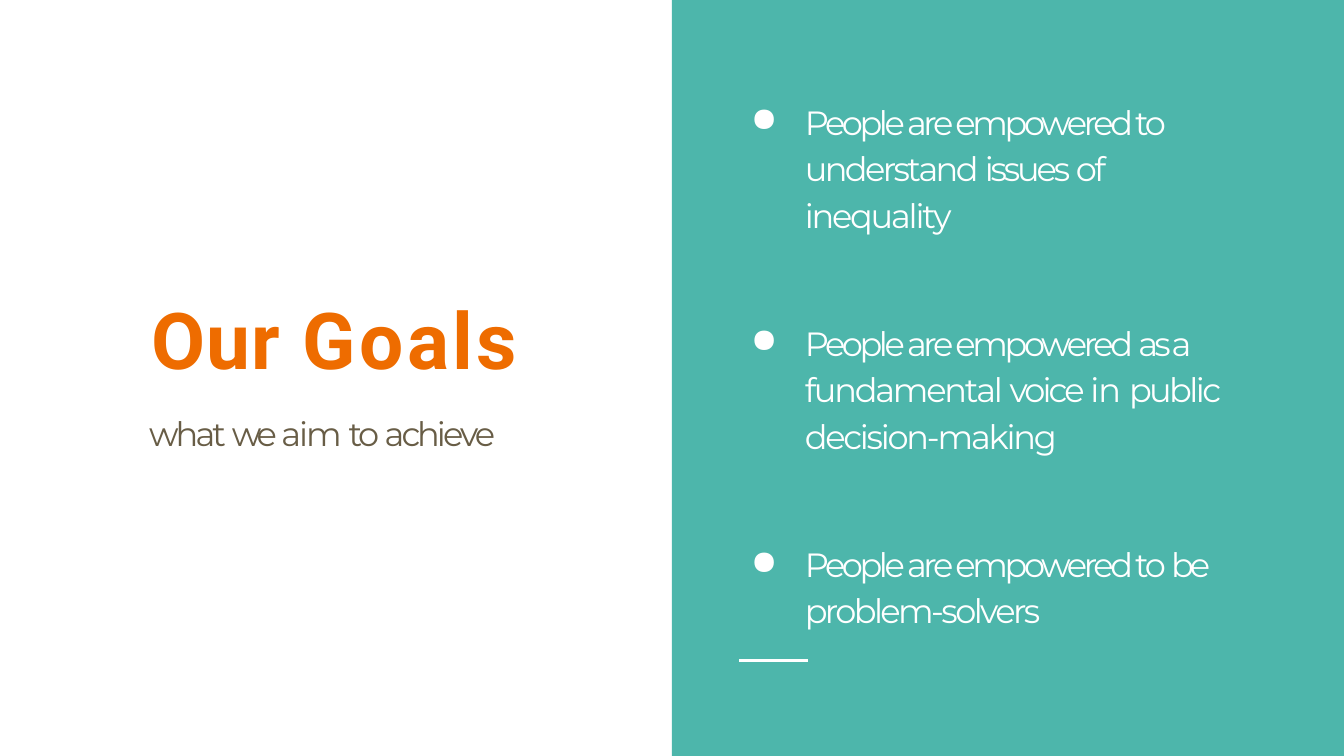
from lxml.etree import SubElement
from pptx import Presentation
from pptx.dml.color import RGBColor
from pptx.enum.shapes import MSO_CONNECTOR, MSO_SHAPE
from pptx.enum.text import MSO_AUTO_SIZE
from pptx.oxml.ns import qn
from pptx.util import Cm, Pt

WHITE, TEAL, ORANGE, BROWN = "FFFFFF", "4DB6AB", "EE6C00", "685D46"
PAGE_WIDTH, PAGE_HEIGHT = 25.4, 14.29

# Each span is its text and its letter spacing in points.
TITLE = [("Our ", 0.6), ("Goals", 1.9)]
SUBTITLE = [("what ", -1.6), ("we ", -2.3), ("aim ", -1.1), ("to ", -1.8), ("achieve", -1.6)]
# Each goal is its box width and height in centimetres and its spans.
GOALS = [
    (8.59, 2.69, [("People are empowered to ", -1.8), ("understand ", -1.4), ("issues ", -1.7),
                  ("of ", -1.4), ("inequality", -1.2)]),
    (9.45, 2.69, [("People are empowered ", -1.8), ("as a ", -2.1), ("fundamental ", -1.2),
                  ("voice ", -1.6), ("in ", -0.5), ("public ", -1.4), ("decision-making", -1.2)]),
    (9.45, 1.83, [("People are empowered to ", -1.8), ("be ", -2.2), ("problem-solvers", -1.4)]),
]


def color(hex_code):
    return RGBColor.from_string(hex_code)


def add_text_frame(page, left, top, width, height):
    box = page.shapes.add_textbox(Cm(left), Cm(top), Cm(width), Cm(height))
    frame = box.text_frame
    frame.word_wrap = True
    frame.auto_size = MSO_AUTO_SIZE.SHAPE_TO_FIT_TEXT
    frame.margin_left = frame.margin_right = frame.margin_bottom = 0
    frame.margin_top = Cm(0.06)
    return frame


def fill_paragraph(para, spans, font_name, size, hex_code, bold=False):
    para.font.name = font_name
    para.font.size = Pt(size)
    para.font.bold = bold
    para.font.color.rgb = color(hex_code)
    for text, spacing in spans:
        span = para.add_run()
        span.text = text
        span._r.get_or_add_rPr().set("spc", str(round(spacing * 100)))


def set_indent(para, margin, indent=0):
    properties = para._p.get_or_add_pPr()
    properties.set("marL", str(Cm(margin)))
    properties.set("indent", str(Cm(indent)))
    return properties


def add_bullet(para):
    properties = set_indent(para, 1.04, -1.02)
    SubElement(properties, qn("a:buChar"), char="●")
    tabs = SubElement(properties, qn("a:tabLst"))
    for position in (1.04, 1.07):
        SubElement(tabs, qn("a:tab"), pos=str(Cm(position)), algn="l")


def add_heading(page, left, top, width, height):
    frame = add_text_frame(page, left, top, width, height)
    title = frame.paragraphs[0]
    set_indent(title, 0.08)
    fill_paragraph(title, TITLE, "Roboto", 42, ORANGE, bold=True)
    subtitle = frame.add_paragraph()
    set_indent(subtitle, 0.03)
    subtitle.space_before = Pt(15.2)
    fill_paragraph(subtitle, SUBTITLE, "Montserrat", 18, BROWN)


def add_goals_panel(page, left, top, width, height):
    panel = page.shapes.add_shape(MSO_SHAPE.RECTANGLE, Cm(left), Cm(top), Cm(width), Cm(height))
    panel.shadow.inherit = False
    panel.fill.solid()
    panel.fill.fore_color.rgb = color(TEAL)
    panel.line.fill.background()

    rule_left, rule_top = left + 1.27, top + 12.49
    rule = page.shapes.add_connector(MSO_CONNECTOR.STRAIGHT, Cm(rule_left), Cm(rule_top),
                                     Cm(rule_left + 1.3), Cm(rule_top))
    rule.line.color.rgb = color(WHITE)
    rule.line.width = Pt(1.5)
    SubElement(rule._element.spPr, qn("a:effectLst"))

    for index, (goal_width, goal_height, spans) in enumerate(GOALS):
        goal_top = top + 1.75 + index * 4.18
        frame = add_text_frame(page, left + 1.47, goal_top, goal_width, goal_height)
        para = frame.paragraphs[0]
        add_bullet(para)
        para.line_spacing = 1.15
        fill_paragraph(para, spans, "Montserrat", 18, WHITE)


def main():
    deck = Presentation()
    deck.slide_width, deck.slide_height = Cm(PAGE_WIDTH), Cm(PAGE_HEIGHT)
    page = deck.slides.add_slide(deck.slide_layouts[6])
    page.background.fill.solid()
    page.background.fill.fore_color.rgb = color(WHITE)
    half = PAGE_WIDTH / 2
    add_goals_panel(page, half, 0, half, PAGE_HEIGHT)
    add_heading(page, 2.79, 5.44, 7.11, 3.15)
    deck.save("out.pptx")


if __name__ == "__main__":
    main()
